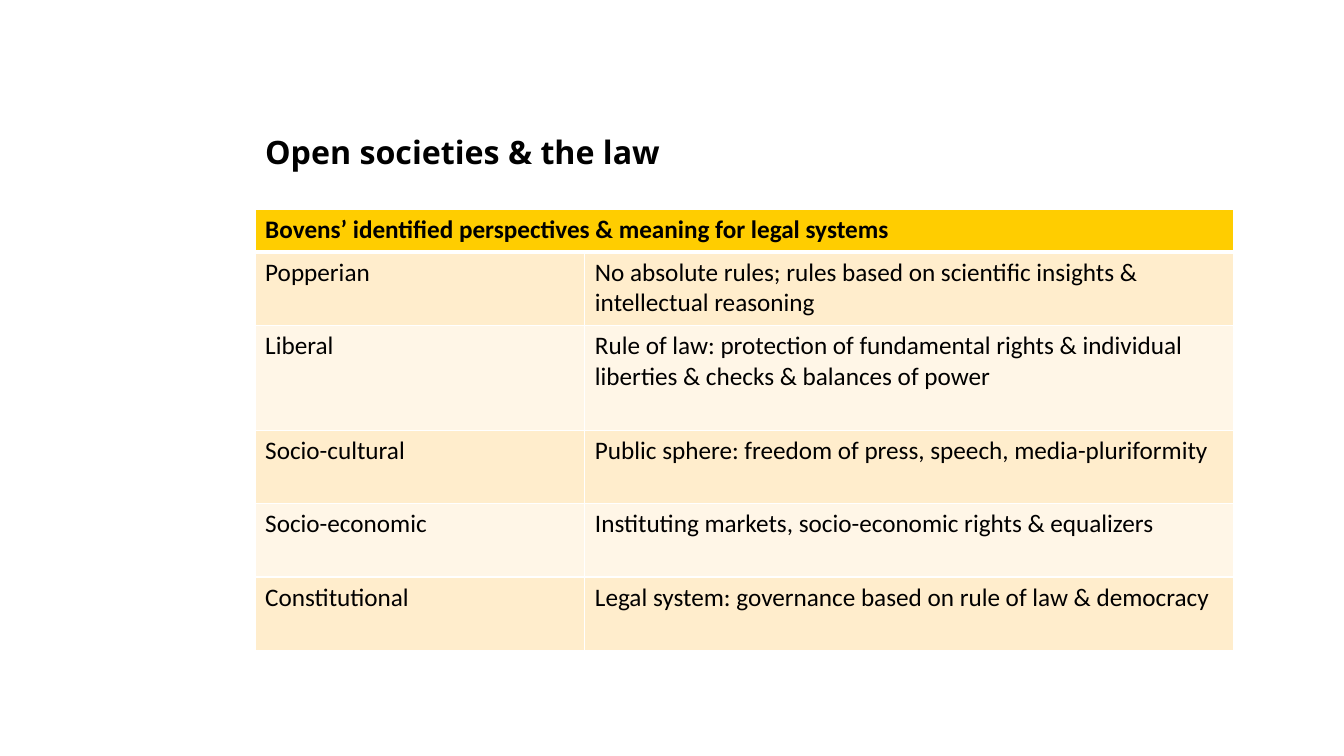
import pptx
import pptx.dml.color
import pptx.enum.text
import pptx.oxml
import pptx.oxml.ns
import pptx.util
from pptx.util import Cm

BLACK, WHITE = "000000", "FFFFFF"
HEADER_FILL = "FFCD00"
BAND_FILLS = ["FFEDCC", "FFF6E7"]
HEADING = "Bovens’ identified perspectives & meaning for legal systems"
PERSPECTIVES = [
    ("Popperian", "No absolute rules; rules based on scientific insights & intellectual reasoning"),
    ("Liberal", "Rule of law: protection of fundamental rights & individual liberties"
                " & checks & balances of power"),
    ("Socio-cultural", "Public sphere: freedom of press, speech, media-pluriformity"),
    ("Socio-economic", "Instituting markets, socio-economic rights & equalizers"),
    ("Constitutional", "Legal system: governance based on rule of law & democracy"),
]
COLUMN_WIDTHS = [Cm(8.31), Cm(16.36)]
ROW_HEIGHTS = [Cm(1.07), Cm(1.85), Cm(2.64), Cm(1.85), Cm(1.85), Cm(1.85)]


def colour(value):
    return pptx.dml.color.RGBColor.from_string(value)


def style(paragraph, font_name, size, bold):
    font = paragraph.font
    font.name, font.size, font.bold = font_name, pptx.util.Pt(size), bold
    font.color.rgb = colour(BLACK)


def add_title(slide, wording):
    title = slide.shapes.add_textbox(Cm(6.43), Cm(3.33), Cm(21), Cm(3.48))
    frame = title.text_frame
    frame.word_wrap = True
    frame.vertical_anchor = pptx.enum.text.MSO_ANCHOR.TOP
    frame.text = wording
    frame.paragraphs[0].line_spacing = 0.9
    style(frame.paragraphs[0], "Open Sans", 23, True)


def set_borders(cell, widths):
    """Draw white borders; widths in points for left, right, top, bottom."""
    properties = cell._tc.get_or_add_tcPr()
    for index, (side, width) in enumerate(zip("LRTB", widths)):
        border = pptx.oxml.parse_xml(
            f'<a:ln{side} {pptx.oxml.ns.nsdecls("a")} w="{pptx.util.Pt(width)}">'
            f'<a:solidFill><a:srgbClr val="{WHITE}"/></a:solidFill></a:ln{side}>')
        properties.insert(index, border)


def fill_cell(cell, wording, fill, bold, border_widths):
    cell.fill.solid()
    cell.fill.fore_color.rgb = colour(fill)
    cell.text = wording
    style(cell.text_frame.paragraphs[0], "Calibri", 18, bold)
    set_borders(cell, border_widths)


def add_perspectives_table(slide):
    table = slide.shapes.add_table(
        len(ROW_HEIGHTS), len(COLUMN_WIDTHS), Cm(6.43), Cm(5.28),
        sum(COLUMN_WIDTHS), sum(ROW_HEIGHTS)).table
    for column, width in zip(table.columns, COLUMN_WIDTHS):
        column.width = width
    for row, height in zip(table.rows, ROW_HEIGHTS):
        row.height = height

    # Heading across both columns, with a thick line below
    table.cell(0, 0).merge(table.cell(0, 1))
    for column, wording in enumerate((HEADING, "")):
        fill_cell(table.cell(0, column), wording, HEADER_FILL, True, (1, 1, 1, 3))

    # Banded rows of perspectives
    for row, perspective in enumerate(PERSPECTIVES, start=1):
        top = 3 if row == 1 else 1
        for column, wording in enumerate(perspective):
            fill_cell(table.cell(row, column), wording,
                      BAND_FILLS[(row - 1) % 2], False, (1, 1, top, 1))


def main():
    deck = pptx.Presentation()
    deck.slide_width, deck.slide_height = Cm(33.87), Cm(19.05)
    slide = deck.slides.add_slide(deck.slide_layouts[6])
    add_title(slide, "Open societies & the law")
    add_perspectives_table(slide)
    deck.save("out.pptx")


if __name__ == "__main__":
    main()
